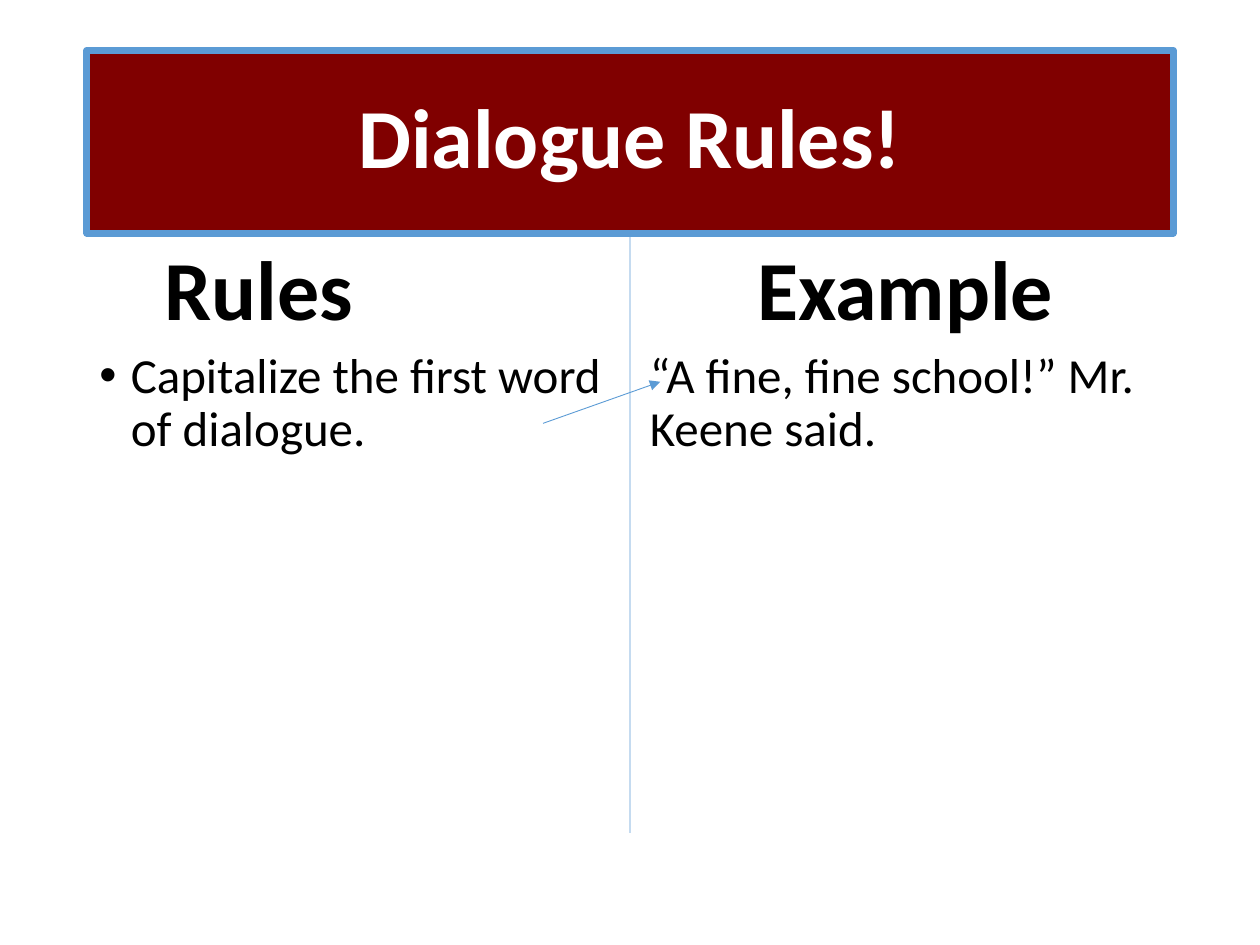
from dataclasses import dataclass

import pptx
import pptx.dml.color
import pptx.enum.shapes
import pptx.enum.text
import pptx.oxml
import pptx.oxml.ns
import pptx.util
from pptx.util import Inches

RGBColor = pptx.dml.color.RGBColor
PP_ALIGN = pptx.enum.text.PP_ALIGN
MSO_ANCHOR = pptx.enum.text.MSO_ANCHOR


@dataclass(frozen=True)
class Theme:
    font: str = "Calibri"
    banner: RGBColor = RGBColor(0x80, 0x00, 0x00)
    accent: RGBColor = RGBColor(0x5B, 0x9B, 0xD5)
    light: RGBColor = RGBColor(0xFF, 0xFF, 0xFF)
    dark: RGBColor = RGBColor(0x00, 0x00, 0x00)
    heading_size: pptx.util.Pt = pptx.util.Pt(48)
    body_size: pptx.util.Pt = pptx.util.Pt(28)
    border_width: pptx.util.Pt = pptx.util.Pt(4)
    line_width: pptx.util.Pt = pptx.util.Pt(0.5)


THEME = Theme()


def apply_format(target, values):
    for name, value in values.items():
        setattr(target, name, value)


def append_xml(parent, tag, **attributes):
    element = parent.makeelement(pptx.oxml.ns.qn(tag), attributes)
    parent.append(element)


def write_text(shape, text, size, color, bold=False, bulleted=False,
               alignment=PP_ALIGN.LEFT, anchor=MSO_ANCHOR.TOP):
    frame = shape.text_frame
    apply_format(frame, {"word_wrap": True, "vertical_anchor": anchor})
    paragraph = frame.paragraphs[0]
    paragraph.text = text
    apply_format(paragraph, {"alignment": alignment, "line_spacing": 0.9})
    if bulleted:
        properties = paragraph._p.get_or_add_pPr()
        properties.set("marL", str(Inches(0.25)))
        properties.set("indent", str(-Inches(0.25)))
        append_xml(properties, "a:buFont", typeface="Arial")
        append_xml(properties, "a:buChar", char="•")
    font = paragraph.runs[0].font
    apply_format(font, {"name": THEME.font, "size": size, "bold": bold})
    font.color.rgb = color


def add_banner(slide, box, text):
    banner = slide.shapes.add_shape(
        pptx.enum.shapes.MSO_SHAPE.RECTANGLE, *map(Inches, box))
    banner.shadow.inherit = False
    banner.fill.solid()
    banner.fill.fore_color.rgb = THEME.banner
    banner.line.color.rgb = THEME.accent
    banner.line.width = THEME.border_width
    append_xml(banner.line._get_or_add_ln(), "a:round")
    write_text(banner, text, THEME.heading_size, THEME.light, bold=True,
               alignment=PP_ALIGN.CENTER, anchor=MSO_ANCHOR.MIDDLE)
    return banner


def add_column(slide, box, heading, body, bulleted=False, heading_inset=0.1):
    left, top, width, height = box
    heading_height = 0.9
    heading_box = slide.shapes.add_textbox(
        *map(Inches, (left, top, width, heading_height)))
    write_text(heading_box, heading, THEME.heading_size, THEME.dark, bold=True,
               alignment=PP_ALIGN.CENTER, anchor=MSO_ANCHOR.BOTTOM)
    heading_box.text_frame.margin_right = Inches(heading_inset)
    body_box = slide.shapes.add_textbox(
        *map(Inches, (left, top + heading_height, width, height - heading_height)))
    write_text(body_box, body, THEME.body_size, THEME.dark, bulleted=bulleted)


def add_line(slide, start, end, arrow=False):
    connector = slide.shapes.add_connector(
        pptx.enum.shapes.MSO_CONNECTOR.STRAIGHT, *map(Inches, start + end))
    connector.line.color.rgb = THEME.accent
    connector.line.width = THEME.line_width
    if arrow:
        append_xml(connector.line._get_or_add_ln(), "a:tailEnd", type="triangle")
    append_xml(connector._element.spPr, "a:effectLst")
    return connector


def main():
    presentation = pptx.Presentation()
    apply_format(presentation, {"slide_width": Inches(10), "slide_height": Inches(7.5)})
    slide = presentation.slides.add_slide(presentation.slide_layouts[6])
    banner = add_banner(slide, (0.69, 0.4, 8.62, 1.45), "Dialogue Rules!")
    add_column(slide, (0.69, 1.84, 4.23, 4.93), "Rules",
               "Capitalize the first word of dialogue.",
               bulleted=True, heading_inset=1.6)
    add_column(slide, (5.06, 1.84, 4.25, 4.77), "Example",
               "“A fine, fine school!” Mr. Keene said.")
    add_line(slide, (4.31, 3.36), (5.24, 3.03), arrow=True)
    divider = add_line(slide, (5, 1.85), (5, 6.61))
    divider.begin_connect(banner, 2)
    presentation.save("out.pptx")


if __name__ == "__main__":
    main()
